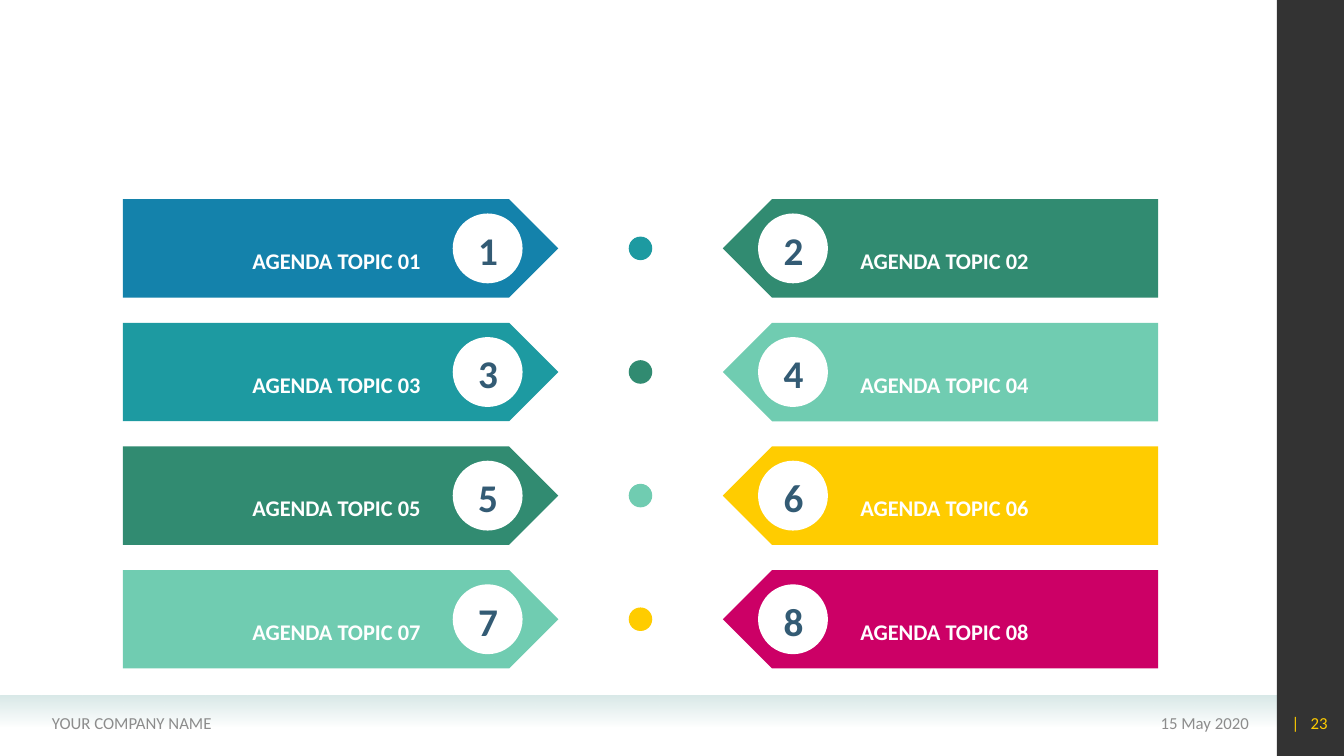
from lxml import etree
from pptx import Presentation
from pptx.dml.color import RGBColor
from pptx.enum.shapes import MSO_SHAPE
from pptx.enum.text import MSO_ANCHOR, PP_ALIGN
from pptx.oxml.ns import qn
from pptx.util import Pt

RECT, ARROW, OVAL = MSO_SHAPE.RECTANGLE, MSO_SHAPE.PENTAGON, MSO_SHAPE.OVAL
MIDDLE, BOTTOM = MSO_ANCHOR.MIDDLE, MSO_ANCHOR.BOTTOM
LEFT, CENTER, RIGHT = PP_ALIGN.LEFT, PP_ALIGN.CENTER, PP_ALIGN.RIGHT

WHITE = RGBColor(0xFF, 0xFF, 0xFF)
BLACK = RGBColor(0x00, 0x00, 0x00)
MIST = RGBColor(0xD9, 0xE9, 0xE8)
GREY = RGBColor(0x8C, 0x8C, 0x8C)
NAVY = RGBColor(0x33, 0x5B, 0x74)
BLUE = RGBColor(0x14, 0x82, 0xAB)
TEAL = RGBColor(0x1D, 0x9A, 0xA1)
GREEN = RGBColor(0x31, 0x8B, 0x71)
MINT = RGBColor(0x70, 0xCC, 0xB1)
YELLOW = RGBColor(0xFF, 0xCC, 0x00)
PINK = RGBColor(0xCC, 0x00, 0x66)

prs = Presentation()
prs.slide_width, prs.slide_height = Pt(960), Pt(540)
s = prs.slides.add_slide(prs.slide_layouts[6])


def add_shape(kind, x, y, w, h, color, alpha=None):
    sp = s.shapes.add_shape(kind, Pt(x), Pt(y), Pt(w), Pt(h))
    sp.shadow.inherit = False
    sp.line.fill.background()
    sp.fill.solid()
    sp.fill.fore_color.rgb = color
    if alpha is not None:
        clr = sp._element.xpath(".//a:srgbClr")[0]
        etree.SubElement(clr, qn("a:alpha")).set("val", str(alpha * 1000))
    return sp


def add_text(runs, x, y, w, h, size, color, align, anchor=MIDDLE, bold=False):
    tf = s.shapes.add_textbox(Pt(x), Pt(y), Pt(w), Pt(h)).text_frame
    tf.word_wrap = True
    tf.vertical_anchor = anchor
    p = tf.paragraphs[0]
    p.alignment = align
    for text, spacing in runs:
        r = p.add_run()
        r.text = text
        r.font.name = "Calibri"
        r.font.size = Pt(size)
        r.font.bold = bold
        r.font.color.rgb = color
        if spacing:
            r._r.get_or_add_rPr().set("spc", str(spacing))


band = add_shape(RECT, 0, 496.5, 912, 22.5, MIST)
band.fill.gradient()
band.fill.gradient_angle = 270
for stop, position in zip(band.fill.gradient_stops, (0, 1)):
    stop.color.rgb = MIST
    stop.position = position
fade = band._element.xpath(".//a:srgbClr")[-1]
etree.SubElement(fade, qn("a:alpha")).set("val", "0")

add_shape(RECT, 912, 0, 48, 540, BLACK, 80)

add_text([("15 May 2020", 0)], 655.2, 502, 244, 28.8, 12, GREY, RIGHT)
add_text([("YOUR COMPANY NAME", 0)], 30, 502, 353, 28.8, 12, GREY, LEFT)
add_text([("|", 0), (" ", 540), ("23", 0)], 907.2, 502, 48.3, 28.8, 12, YELLOW, RIGHT)

ROW_TOP, ROW_PITCH = 142.3, 88.3
columns = [
    (87.8, 323.4, 333.2, 167.8, RIGHT, 0),
    (516.3, 541.5, 551.3, 607.5, LEFT, 180),
]
rows = [
    (BLUE, GREEN, TEAL),
    (TEAL, MINT, GREEN),
    (GREEN, YELLOW, MINT),
    (MINT, PINK, YELLOW),
]

for i, (left_color, right_color, dot_color) in enumerate(rows):
    y = ROW_TOP + i * ROW_PITCH
    for j, color in enumerate((left_color, right_color)):
        arrow_x, circle_x, number_x, label_x, align, rotation = columns[j]
        topic = 2 * i + j + 1
        arrow = add_shape(ARROW, arrow_x, y, 311, 70.3, color)
        arrow.rotation = rotation
        add_shape(OVAL, circle_x, y + 10.2, 49.9, 49.9, WHITE)
        add_text([(str(topic), 0)], number_x, y + 15.5, 31, 41, 28, NAVY, CENTER, bold=True)
        add_text([(f"AGENDA TOPIC {topic:02}", 0)], label_x, y + 11, 139.7, 46,
                 16, WHITE, align, BOTTOM, True)
    add_shape(OVAL, 449.1, y + 26.7, 16.8, 16.8, dot_color)

prs.save("out.pptx")
